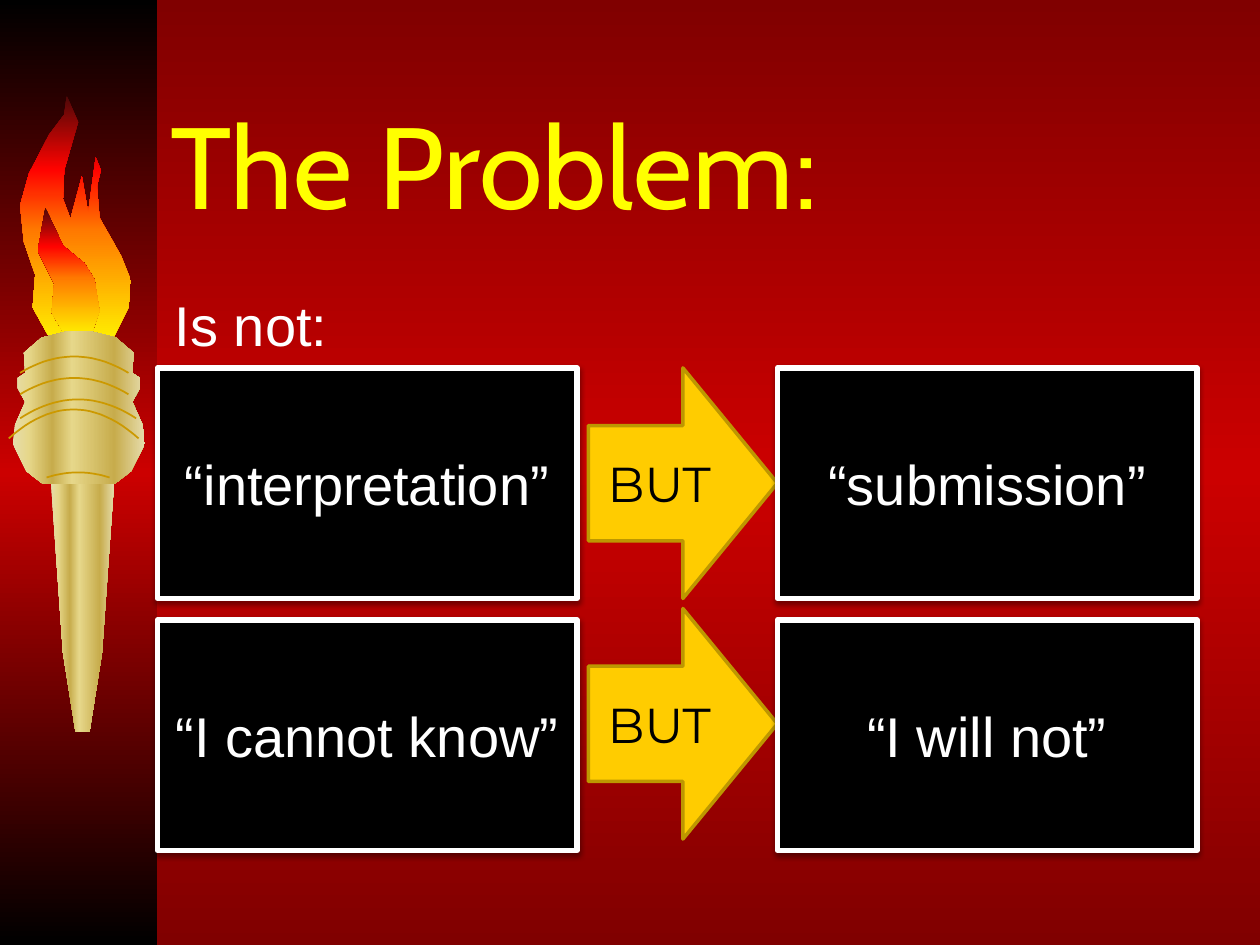
from lxml import etree
from pptx import Presentation
from pptx import util as u
from pptx.dml.color import RGBColor
from pptx.enum import shapes, text
from pptx.oxml import ns

WIDTH, HEIGHT = 10, 7.5
LEFT, TOP = 1.25, 2.92                  # origin of the grid, inches
BOX_WIDTH, ROW_HEIGHT = 3.33, 1.83
ARROW_LEFT, ARROW_WIDTH, ARROW_STEP = 4.67, 1.5, 1.91
RIGHT_LEFT, BOX_STEP = 6.17, 2
ROWS = [("“interpretation”", "“submission”"), ("“I cannot know”", "“I will not”")]

FIRE = [(0, "4D0808"), (30, "FF0300"), (55, "FF7A00"), (100, "FFF200")]
GOLD = [(0, "E6DCAC"), (12, "E6D78A"), (30, "C7AC4C"), (45, "E6D78A"),
        (77, "C7AC4C"), (100, "E6DCAC")]

# Torch outlines, in hundredths of an inch
FLAME = [(88, 272), (102, 244), (104, 223), (96, 203), (79, 173), (77, 148), (80, 135),
         (76, 125), (70, 169), (65, 140), (56, 174), (50, 158), (51, 135), (62, 97),
         (53, 76), (51, 91), (39, 107), (23, 138), (16, 163), (19, 192), (28, 218),
         (26, 244), (41, 271)]
INNER_FLAME = [(36, 165), (30, 199), (43, 225), (41, 248), (52, 267), (72, 267),
               (79, 247), (75, 222), (67, 209), (50, 195)]
# Left halves of the symmetric parts
STEM = [(40, 376), (50, 518), (60, 581)]
BOWL = [(53, 263), (33, 268), (19, 280), (20, 296), (14, 300), (14, 308), (20, 319),
        (12, 337), (10, 352), (21, 374), (34, 384)]
# Bands on the bowl: left, right, top, drop at the ends
BANDS = [(16, 102, 283, 13), (16, 102, 300, 13), (7, 110, 325, 23),
         (16, 108, 317, 15), (37, 87, 375, 4)]


def color(value):
    return RGBColor.from_string(value)


def set_gradient(fill, owner, stops, angle):
    fill.gradient()
    fill.gradient_angle = (360 - angle) % 360
    stop_list = owner.element.find(".//" + ns.qn("a:gsLst"))
    for stop in list(stop_list):
        stop_list.remove(stop)
    for position, value in stops:
        stop = etree.SubElement(stop_list, ns.qn("a:gs"), pos=str(position * 1000))
        etree.SubElement(stop, ns.qn("a:srgbClr"), val=value)


def set_line(shape, value, width):
    shape.line.color.rgb = color(value)
    shape.line.width = u.Pt(width)


def add_preset(page, kind, left, top, width, height):
    shape = page.shapes.add_shape(kind, *map(u.Inches, (left, top, width, height)))
    shape.shadow.inherit = False
    return shape


def add_path(page, points, closed):
    """Draw a freeform through points given in hundredths of an inch."""
    points = [(round(x * 10), round(y * 10)) for x, y in points]
    builder = page.shapes.build_freeform(*points[0], scale=u.Inches(1) / 1000)
    builder.add_line_segments(points[1:], close=closed)
    shape = builder.convert_to_shape()
    shape.shadow.inherit = False
    return shape


def mirrored(half, width):
    """Close a left half with its reflection; width is the sum of both sides' x."""
    return half + [(width - x, y) for x, y in reversed(half)]


def arc_points(left, right, top, drop, steps=24):
    """Sample a shallow arch that falls by drop at both ends."""
    shares = [step / steps for step in range(steps + 1)]
    return [(left + (right - left) * share, top + drop * (2 * share - 1) ** 2)
            for share in shares]


def write(shape, words, font, size, value, align, before=0):
    frame = shape.text_frame
    frame.vertical_anchor = text.MSO_ANCHOR.MIDDLE
    para = frame.paragraphs[0]
    para.alignment = align
    para.space_before = u.Pt(before)
    span = para.add_run()
    span.text = words
    span.font.name = font
    span.font.size = u.Pt(size)
    span.font.color.rgb = color(value)


def add_shadow(shape):
    effects = shape.element.spPr.find(ns.qn("a:effectLst"))
    shadow = etree.SubElement(effects, ns.qn("a:outerShdw"), blurRad=str(u.Pt(3.1)),
                              dist=str(u.Pt(1.6)), dir="5400000", rotWithShape="0")
    tint = etree.SubElement(shadow, ns.qn("a:srgbClr"), val="000000")
    etree.SubElement(tint, ns.qn("a:alpha"), val="38000")


def add_box(page, left, row, words):
    box = add_preset(page, shapes.MSO_SHAPE.RECTANGLE, left, TOP + row * BOX_STEP,
                     BOX_WIDTH, ROW_HEIGHT)
    box.fill.solid()
    box.fill.fore_color.rgb = color("000000")
    set_line(box, "FFFFFF", 3)
    add_shadow(box)
    write(box, words, "Arial", 32, "FFFFFF", text.PP_ALIGN.CENTER, before=6.4)


def add_arrow(page, row):
    arrow = add_preset(page, shapes.MSO_SHAPE.RIGHT_ARROW, ARROW_LEFT,
                       TOP + row * ARROW_STEP, ARROW_WIDTH, ROW_HEIGHT)
    arrow.fill.solid()
    arrow.fill.fore_color.rgb = color("FFCC00")
    set_line(arrow, "BD9700", 2)
    write(arrow, "BUT", "Montserrat", 28, "000000", text.PP_ALIGN.CENTER)


def add_torch(page):
    panel = add_preset(page, shapes.MSO_SHAPE.RECTANGLE, 0, 0, LEFT, HEIGHT)
    set_gradient(panel.fill, panel, [(0, "000000"), (50, "CC0000"), (100, "000000")], 90)
    panel.line.fill.background()
    parts = [(FLAME, FIRE, 90), (INNER_FLAME, FIRE, 90),
             (mirrored(STEM, 131), GOLD, 0), (mirrored(BOWL, 125), GOLD, 0)]
    for points, stops, angle in parts:
        part = add_path(page, points, True)
        set_gradient(part.fill, part, stops, angle)
        part.line.fill.background()
    for band_size in BANDS:
        band = add_path(page, arc_points(*band_size), False)
        band.fill.background()
        set_line(band, "CC9900", 1)


def add_headings(page):
    title = page.shapes.title
    title.left, title.top = u.Inches(LEFT), u.Inches(0.67)
    title.width, title.height = u.Inches(8.5), u.Inches(1.25)
    write(title, "The Problem:", "Cabin", 66, "FFFF00", text.PP_ALIGN.LEFT)
    label = page.shapes.add_textbox(*map(u.Inches, (1.29, 2.25, 1.55, 0.64)))
    label.text_frame.word_wrap = False
    write(label, "Is not:", "Arial", 32, "FFFFFF", text.PP_ALIGN.LEFT)


def main():
    deck = Presentation()
    deck.slide_width, deck.slide_height = u.Inches(WIDTH), u.Inches(HEIGHT)
    page = deck.slides.add_slide(deck.slide_layouts[5])
    set_gradient(page.background.fill, page,
                 [(0, "800000"), (50, "CC0000"), (100, "800000")], 90)
    add_torch(page)
    add_headings(page)
    for row, (claim, truth) in enumerate(ROWS):
        add_box(page, LEFT, row, claim)
        add_arrow(page, row)
        add_box(page, RIGHT_LEFT, row, truth)
    deck.save("out.pptx")


if __name__ == "__main__":
    main()
